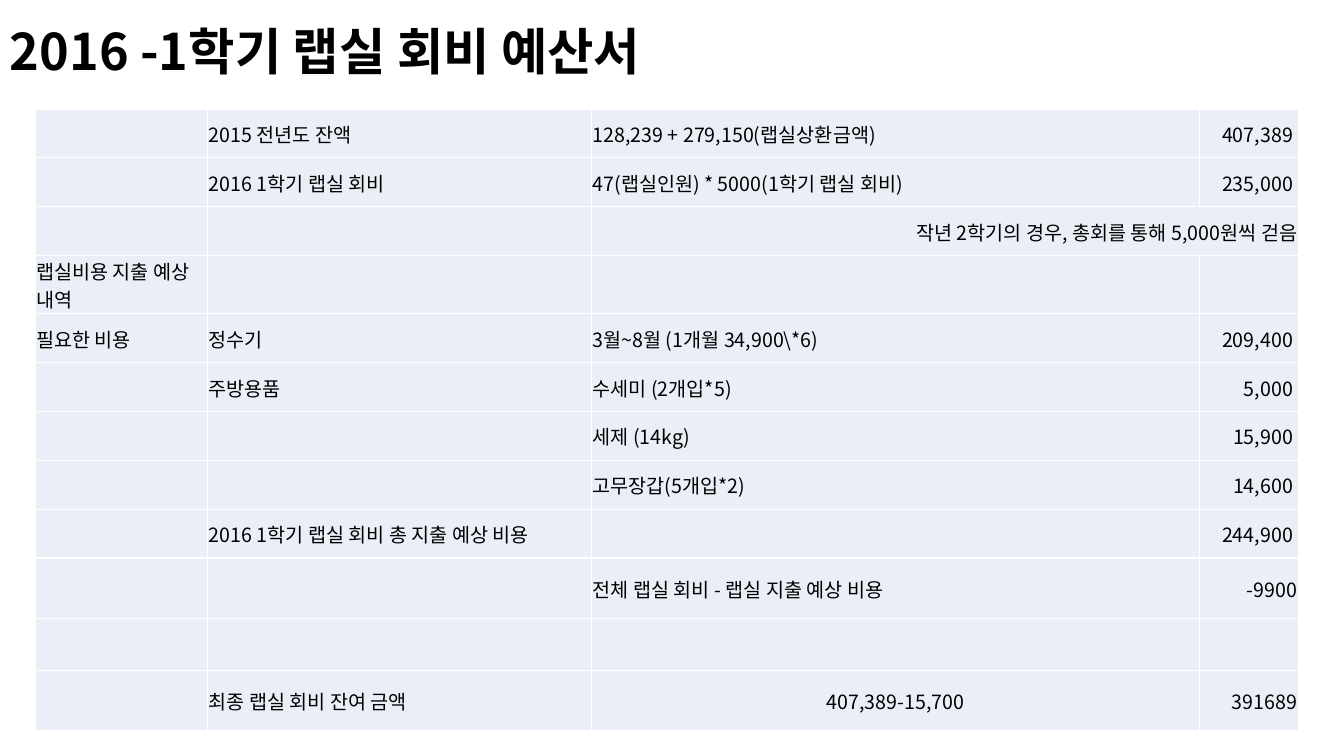
from lxml.etree import SubElement
from pptx import Presentation
from pptx.dml.color import RGBColor
from pptx.enum.text import MSO_ANCHOR, PP_ALIGN
from pptx.oxml.ns import qn
from pptx.util import Pt

FONT = "Noto Sans CJK KR"
BLACK = RGBColor(0x00, 0x00, 0x00)
CELL_FILL = RGBColor(0xEA, 0xEF, 0xF7)
BORDER = RGBColor(0xFF, 0xFF, 0xFF)

COLUMN_WIDTHS = [123.1, 274.3, 434.3, 70.6]
# The fourth row holds a label of two lines
ROW_HEIGHTS = [34.9] * 3 + [41.6] + [34.9] * 5 + [43.1, 37.4, 43.1]
NOTE_ROW, FINAL_ROW = 2, 11
DETAIL_COLUMN, AMOUNT_COLUMN = 2, 3

BUDGET = [
    ("", "2015 전년도 잔액", "128,239 + 279,150(랩실상환금액)", "407,389 "),
    ("", "2016 1학기 랩실 회비", "47(랩실인원) * 5000(1학기 랩실 회비)", "235,000 "),
    ("", "", "작년 2학기의 경우, 총회를 통해 5,000원씩 걷음", ""),
    ("랩실비용 지출 예상 내역", "", "", ""),
    ("필요한 비용", "정수기", "3월~8월 (1개월 34,900\\*6)", "209,400 "),
    ("", "주방용품", "수세미 (2개입*5)", "5,000 "),
    ("", "", "세제 (14kg)", "15,900 "),
    ("", "", "고무장갑(5개입*2)", "14,600 "),
    ("", "2016 1학기 랩실 회비 총 지출 예상 비용", "", "244,900 "),
    ("", "", "전체 랩실 회비 - 랩실 지출 예상 비용", "-9900"),
    ("", "", "", ""),
    ("", "최종 랩실 회비 잔여 금액", "407,389-15,700", "391689"),
]


def write_text(frame, text, size=14, bold=False, align=PP_ALIGN.LEFT, spacing=1.0):
    paragraph = frame.paragraphs[0]
    paragraph.alignment = align
    paragraph.line_spacing = spacing
    paragraph.font.size = Pt(size)
    if not text:
        return
    run = paragraph.add_run()
    run.text = text
    run.font.size = Pt(size)
    run.font.bold = bold
    run.font.color.rgb = BLACK
    run.font.name = FONT
    # Korean glyphs take the East Asian typeface
    SubElement(run.font._element, qn("a:ea"), typeface=FONT)


def add_title(slide, left, top, width, height):
    box = slide.shapes.add_textbox(Pt(left), Pt(top), Pt(width), Pt(height))
    frame = box.text_frame
    frame.word_wrap = True
    frame.vertical_anchor = MSO_ANCHOR.MIDDLE
    write_text(frame, "2016 -1학기 랩실 회비 예산서", size=36, bold=True, spacing=0.9)


def style_cell(cell):
    # Borders come before the fill in the cell properties
    properties = cell._tc.get_or_add_tcPr()
    for side in ("a:lnL", "a:lnR", "a:lnT", "a:lnB"):
        line = SubElement(properties, qn(side), w=str(Pt(1)))
        fill = SubElement(line, qn("a:solidFill"))
        SubElement(fill, qn("a:srgbClr"), val=str(BORDER))
    cell.fill.solid()
    cell.fill.fore_color.rgb = CELL_FILL
    cell.vertical_anchor = MSO_ANCHOR.MIDDLE
    cell.margin_left = cell.margin_right = cell.margin_top = Pt(0.75)
    cell.margin_bottom = Pt(0)


def cell_alignment(row, column):
    if column == AMOUNT_COLUMN or (row, column) == (NOTE_ROW, DETAIL_COLUMN):
        return PP_ALIGN.RIGHT
    if (row, column) == (FINAL_ROW, DETAIL_COLUMN):
        return PP_ALIGN.CENTER
    return PP_ALIGN.LEFT


def add_budget_table(slide, left, top):
    table = slide.shapes.add_table(
        len(ROW_HEIGHTS), len(COLUMN_WIDTHS), Pt(left), Pt(top),
        Pt(sum(COLUMN_WIDTHS)), Pt(sum(ROW_HEIGHTS))).table
    table.first_row = table.horz_banding = False
    for column, width in zip(table.columns, COLUMN_WIDTHS):
        column.width = Pt(width)
    for row, height in zip(table.rows, ROW_HEIGHTS):
        row.height = Pt(height)
    for row, texts in enumerate(BUDGET):
        for column, text in enumerate(texts):
            cell = table.cell(row, column)
            style_cell(cell)
            write_text(cell.text_frame, text, align=cell_alignment(row, column))
    # The note spans the detail and amount columns
    table.cell(NOTE_ROW, DETAIL_COLUMN).merge(table.cell(NOTE_ROW, AMOUNT_COLUMN))


def main():
    presentation = Presentation()
    presentation.slide_width = Pt(960)
    presentation.slide_height = Pt(540)
    slide = presentation.slides.add_slide(presentation.slide_layouts[6])
    add_title(slide, 0, 0, 535, 77.8)
    add_budget_table(slide, 25.2, 77.8)
    presentation.save("out.pptx")


if __name__ == "__main__":
    main()
